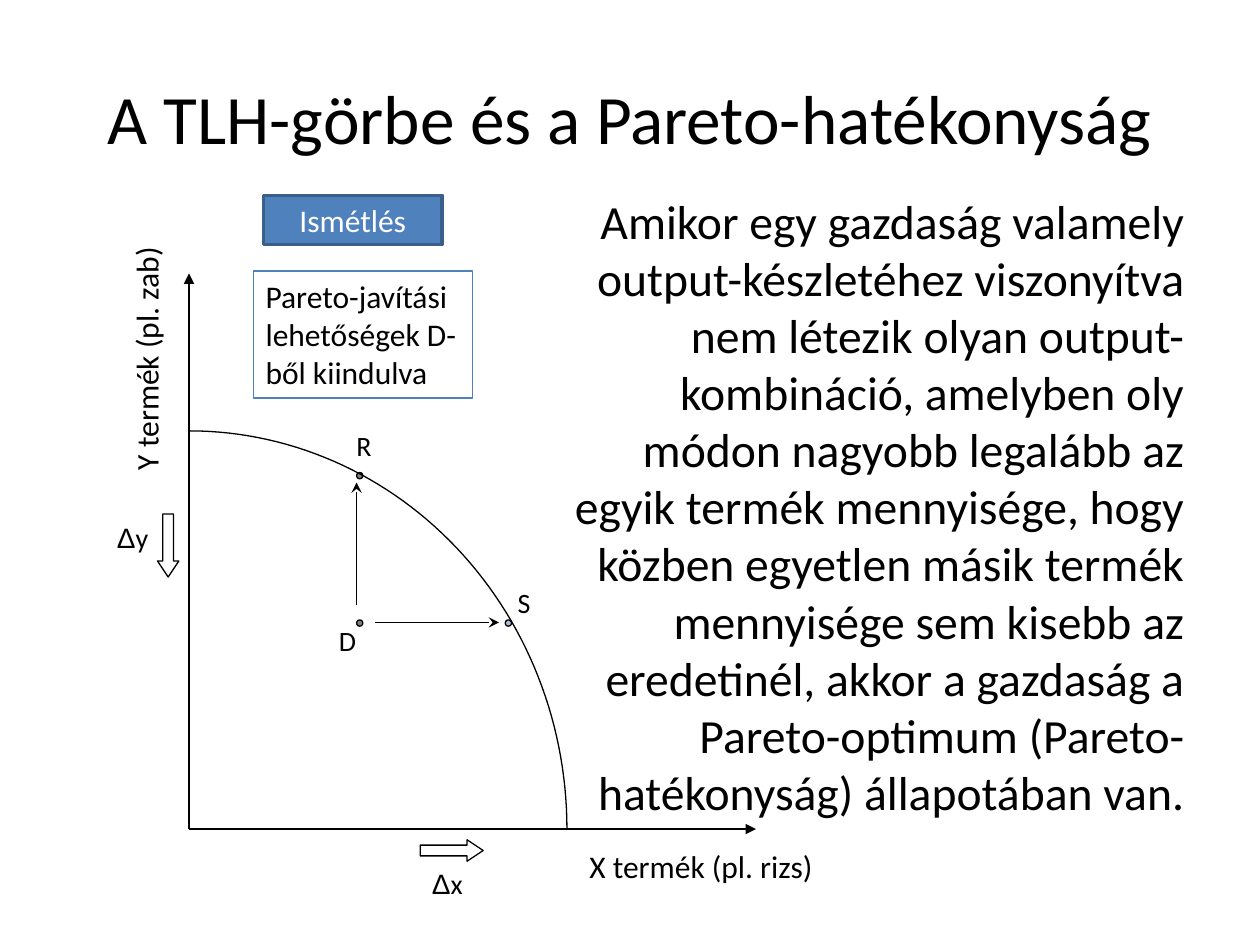
import math
import pptx
import pptx.dml.color
import pptx.enum.shapes
import pptx.enum.text
import pptx.oxml
import pptx.oxml.ns
import pptx.util

COLORS = {"ink": "000000", "paper": "FFFFFF", "blue": "4F81BD", "navy": "3A5F8C"}
SCALE = 9144
SHAPES = pptx.enum.shapes.MSO_SHAPE
ALIGN = pptx.enum.text.PP_ALIGN
ANCHOR = pptx.enum.text.MSO_ANCHOR


def px(value):
    return pptx.util.Emu(round(value * SCALE))


def rgb(name):
    return pptx.dml.color.RGBColor.from_string(COLORS[name])


def add_element(parent, tag, **attributes):
    child = pptx.oxml.parse_xml(f"<a:{tag} {pptx.oxml.ns.nsdecls('a')}/>")
    for key, value in attributes.items():
        child.set(key, str(value))
    parent.append(child)


class Painter:
    font = "Calibri"
    line_width = 0.75

    def __init__(self, page):
        self.page = page

    def add_spans(self, box, spans, size, color="ink", align=ALIGN.LEFT, anchor=ANCHOR.TOP):
        frame = box.text_frame
        frame.word_wrap = True
        frame.vertical_anchor = anchor
        para = frame.paragraphs[0]
        para.alignment = align
        for text, font in spans:
            span = para.add_run()
            span.text = text
            span.font.name = font
            span.font.size = pptx.util.Pt(size)
            span.font.color.rgb = rgb(color)

    def text(self, area, text, size, rotation=0, symbol="", **style):
        box = self.page.shapes.add_textbox(*map(px, area))
        box.rotation = rotation
        spans = [(symbol, "Arial")] if symbol else []
        self.add_spans(box, spans + [(text, self.font)], size, **style)

    def outline(self, shape, color="ink", width=line_width):
        shape.line.color.rgb = rgb(color)
        shape.line.width = pptx.util.Pt(width)

    def shape(self, kind, area, fill=None, line="ink", width=line_width, alpha=100):
        shape = self.page.shapes.add_shape(kind, *map(px, area))
        shape.shadow.inherit = False
        self.outline(shape, line, width)
        if fill is None:
            shape.fill.background()
            return shape
        shape.fill.solid()
        shape.fill.fore_color.rgb = rgb(fill)
        if alpha < 100:
            color = shape.fill._xPr.find(".//" + pptx.oxml.ns.qn("a:srgbClr"))
            add_element(color, "alpha", val=alpha * 1000)
        return shape

    def block_arrow(self, area, rotation=0):
        arrow = self.shape(SHAPES.DOWN_ARROW, area, "paper", alpha=50)
        arrow.adjustments[0] = 0.5
        arrow.adjustments[1] = 0.75
        arrow.rotation = rotation

    def arrow(self, start, end, head):
        line = self.page.shapes.add_connector(
            pptx.enum.shapes.MSO_CONNECTOR.STRAIGHT, *map(px, start + end))
        self.outline(line)
        add_element(line.line._get_or_add_ln(), "tailEnd", type=head)
        add_element(line._element.spPr, "effectLst")

    def quarter_ellipse(self, center, radii, steps=60):
        angles = [math.pi / 2 * step / steps for step in range(steps + 1)]
        points = [(px(center[0] + radii[0] * math.sin(angle)),
                   px(center[1] - radii[1] * math.cos(angle))) for angle in angles]
        builder = self.page.shapes.build_freeform(*points[0])
        builder.add_line_segments(points[1:], close=False)
        curve = builder.convert_to_shape()
        curve.shadow.inherit = False
        curve.fill.background()
        self.outline(curve)


def main():
    deck = pptx.Presentation()
    deck.slide_width, deck.slide_height = px(1000), px(750)
    painter = Painter(deck.slides.add_slide(deck.slide_layouts[6]))

    painter.text((50, 30, 900, 125), "A TLH-görbe és a Pareto-hatékonyság", 39.6,
                 align=ALIGN.CENTER, anchor=ANCHOR.MIDDLE)
    painter.text((422, 147, 528, 523),
                 "Amikor egy gazdaság valamely output-készletéhez viszonyítva nem létezik "
                 "olyan output-kombináció, amelyben oly módon nagyobb legalább az egyik "
                 "termék mennyisége, hogy közben egyetlen másik termék mennyisége sem "
                 "kisebb az eredetinél, akkor a gazdaság a Pareto-optimum "
                 "(Pareto-hatékonyság) állapotában van.", 27.2, align=ALIGN.RIGHT)

    origin = (150, 658)
    for axis_end in ((150, 217), (600, 658)):
        painter.arrow(origin, axis_end, "triangle")
    painter.text((12, 259, 208, 40), "Y termék (pl. zab)", 18, rotation=270)
    painter.text((458, 667, 325, 40), "X termék (pl. rizs)", 18)
    painter.quarter_ellipse(origin, (300, 316))

    points = [("R", (283, 375), (273, 335), "ink"),
              ("D", (283, 492), (259, 490), "ink"),
              ("S", (401, 492), (401, 460), "blue")]
    for name, dot, label, color in points:
        painter.shape(SHAPES.OVAL, dot + (5, 5), color, alpha=50)
        painter.text(label + (42, 37), name, 16)
    painter.arrow((298, 494), (396, 494), "stealth")
    painter.arrow((283, 480), (283, 383), "stealth")

    painter.block_arrow((125, 408, 17, 50))
    painter.block_arrow((350, 650, 17, 50), rotation=270)
    for name, corner in (("y", (83, 408)), ("x", (333, 683))):
        painter.text(corner + (67, 37), name, 16, symbol="Δ")

    badge = painter.shape(SHAPES.RECTANGLE, (209, 155, 142, 39), "blue", "navy", 2)
    painter.add_spans(badge, [("Ismétlés", painter.font)], 18, "paper",
                      ALIGN.CENTER, ANCHOR.MIDDLE)
    remark = painter.shape(SHAPES.RECTANGLE, (201, 215, 174, 101), line="blue")
    painter.add_spans(remark, [("Pareto-javítási lehetőségek D-ből kiindulva", painter.font)], 18)

    deck.save("out.pptx")


if __name__ == "__main__":
    main()
